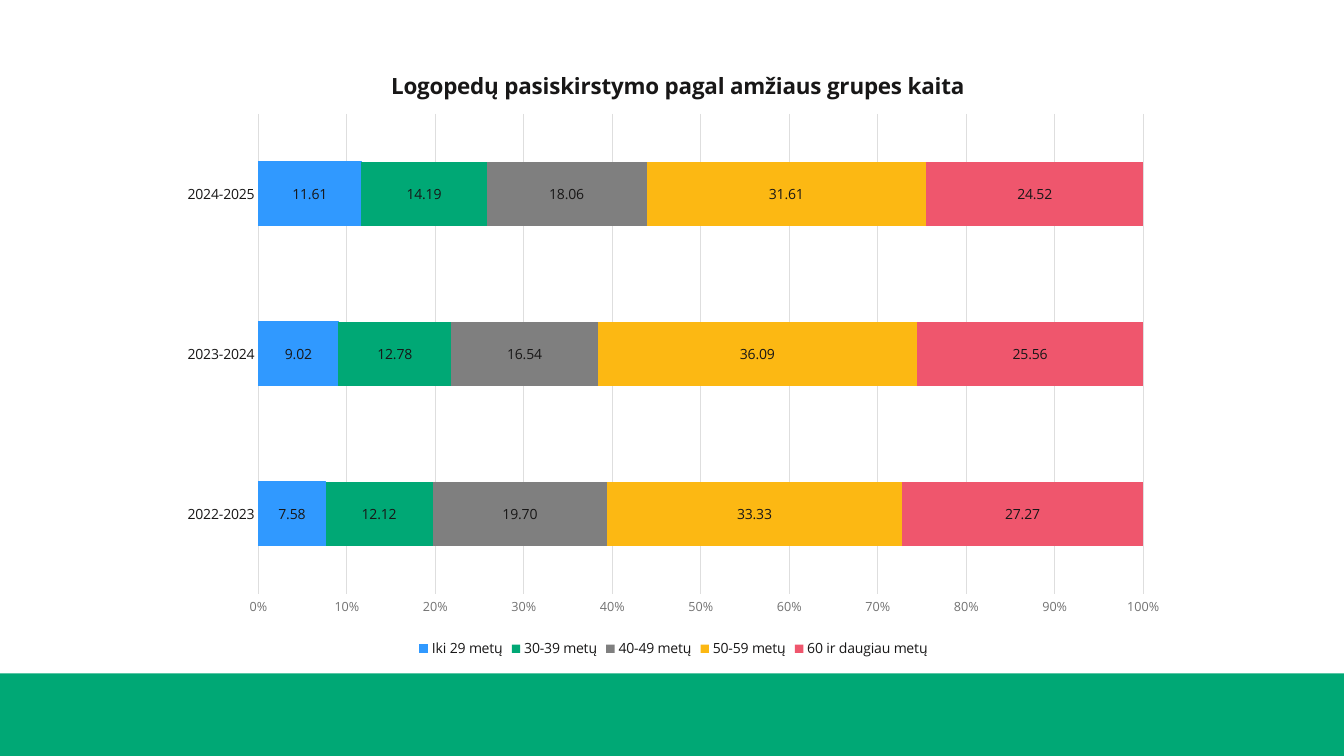
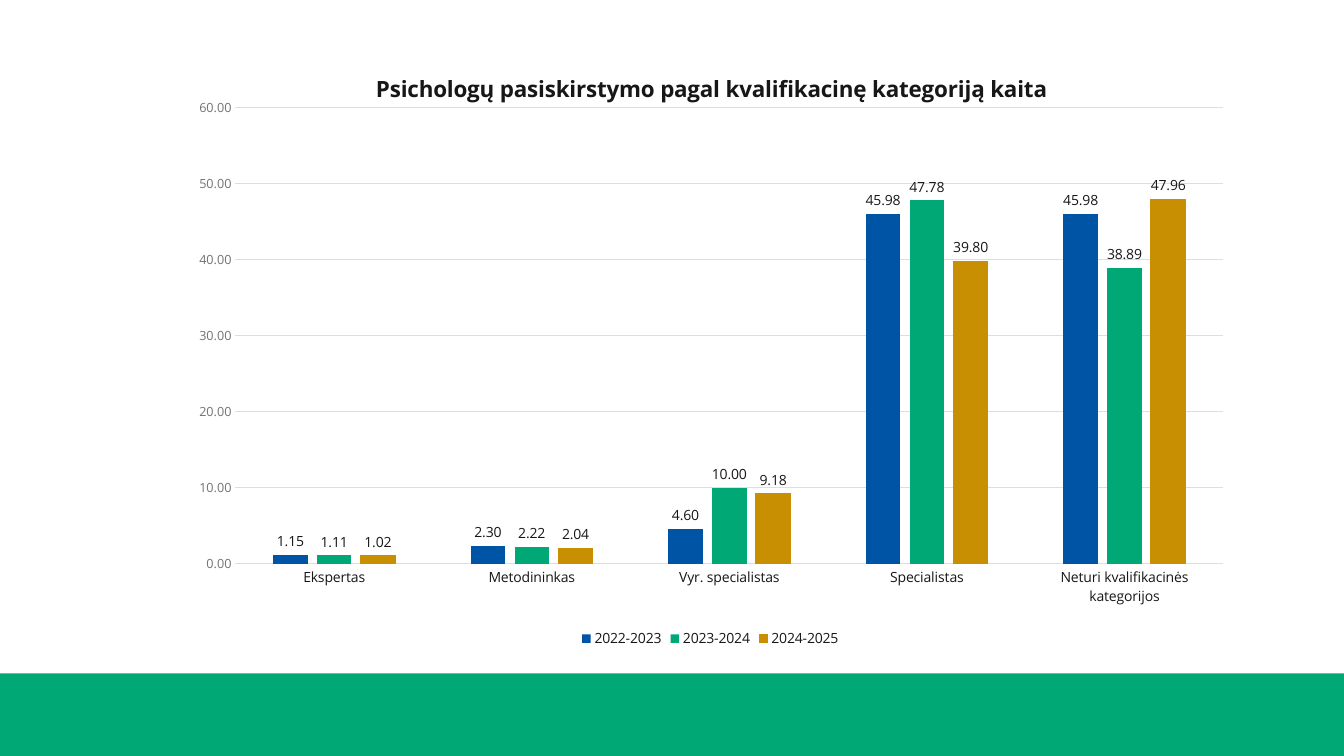
from lxml.etree import SubElement
from pptx import Presentation
from pptx.chart.data import CategoryChartData
from pptx.dml.color import RGBColor
from pptx.enum.chart import (XL_CHART_TYPE, XL_LABEL_POSITION,
                             XL_LEGEND_POSITION, XL_TICK_MARK)
from pptx.enum.shapes import MSO_SHAPE
from pptx.oxml.ns import qn
from pptx.util import Inches, Pt

INK = RGBColor(0x18, 0x17, 0x17)
MUTED = RGBColor(0x72, 0x72, 0x72)
RULE = RGBColor(0xDE, 0xDE, 0xDE)
GREEN = RGBColor(0x00, 0xA8, 0x75)
SKY = RGBColor(0x30, 0x99, 0xFF)
GRAY = RGBColor(0x7F, 0x7F, 0x7F)
AMBER = RGBColor(0xFC, 0xB8, 0x13)
CORAL = RGBColor(0xEF, 0x56, 0x6D)
NAVY = RGBColor(0x00, 0x54, 0xA5)
OCHRE = RGBColor(0xC9, 0x8F, 0x03)


class Deck:
    face = "Open Sans"
    wide, high, band_top = 13.33, 7.5, 6.68

    def __init__(self):
        self.prs = Presentation()
        self.prs.slide_width = Inches(self.wide)
        self.prs.slide_height = Inches(self.high)
        self.slide = None

    def page(self):
        self.slide = self.prs.slides.add_slide(self.prs.slide_layouts[6])
        band = self.slide.shapes.add_shape(
            MSO_SHAPE.RECTANGLE, 0, Inches(self.band_top),
            Inches(self.wide), Inches(self.high - self.band_top))
        band.shadow.inherit = False
        band.fill.solid()
        band.fill.fore_color.rgb = GREEN
        band.line.fill.background()

    def style(self, font, size=10, color=INK, bold=False):
        font.name, font.size, font.bold = self.face, Pt(size), bold
        font.color.rgb = color

    def place(self, node, index, spot, inner=False):
        for old in node.findall(qn("c:layout")):
            node.remove(old)
        layout = SubElement(node, qn("c:layout"))
        node.insert(index, layout)
        manual = SubElement(layout, qn("c:manualLayout"))
        pairs = [("layoutTarget", "inner")] if inner else []
        pairs += [("xMode", "edge"), ("yMode", "edge")]
        pairs += zip("xywh", spot)
        for tag, value in pairs:
            SubElement(manual, qn(f"c:{tag}")).set("val", str(value))

    def title(self, chart, text, spot):
        chart.has_title = True
        title = chart.chart_title
        title.include_in_layout = False
        run = title.text_frame.paragraphs[0].add_run()
        run.text = text
        self.style(run.font, 16, bold=True)
        self.place(title._element, 1, spot)

    def axes(self, chart, form):
        cat, val = chart.category_axis, chart.value_axis
        for axis in (cat, val):
            axis.major_tick_mark = axis.minor_tick_mark = XL_TICK_MARK.NONE
        self.style(cat.tick_labels.font)
        self.style(val.tick_labels.font, 9, MUTED)
        val.has_major_gridlines = True
        for line in (cat.format.line, val.major_gridlines.format.line):
            line.color.rgb = RULE
            line.width = Pt(0.75)
        val.format.line.fill.background()
        val.tick_labels.number_format = form
        val.tick_labels.number_format_is_linked = False

    def series(self, item, color, edged, spot):
        item.format.fill.solid()
        item.format.fill.fore_color.rgb = color
        if edged:
            item.format.line.color.rgb = color
            item.format.line.width = Pt(0.75)
        else:
            item.format.line.fill.background()
        labels = item.data_labels
        labels.show_value = True
        labels.number_format = "0.00"
        labels.number_format_is_linked = False
        labels.position = spot
        self.style(labels.font)

    def chart(self, kind, box, title, title_at, plot_at, cats, rows,
              gap, overlap, form, label_at):
        data = CategoryChartData(number_format="0.00")
        data.categories = cats
        for name, color, edged, values in rows:
            data.add_series(name, values)
        frame = self.slide.shapes.add_chart(kind, *map(Inches, box), data)
        chart = frame.chart
        self.style(chart.font)
        self.title(chart, title, title_at)
        self.axes(chart, form)
        plot = chart.plots[0]
        plot.vary_by_categories = False
        plot.gap_width, plot.overlap = gap, overlap
        for item, (name, color, edged, values) in zip(plot.series, rows):
            self.series(item, color, edged, label_at)
        chart.has_legend = True
        chart.legend.position = XL_LEGEND_POSITION.BOTTOM
        chart.legend.include_in_layout = False
        self.style(chart.legend.font)
        area = chart._chartSpace.find(f".//{qn('c:plotArea')}")
        self.place(area, 0, plot_at, inner=True)
        return chart


def main():
    deck = Deck()
    years = ["2022-2023", "2023-2024", "2024-2025"]

    deck.page()
    deck.chart(
        XL_CHART_TYPE.BAR_STACKED_100, (1.66, 0.41, 10.04, 6.16),
        "Logopedų pasiskirstymo pagal amžiaus grupes kaita",
        (0.217, 0.038), (0.09, 0.117, 0.874, 0.773), years,
        [("Iki 29 metų", SKY, True, (7.58, 9.02, 11.61)),
         ("30-39 metų", GREEN, False, (12.12, 12.78, 14.19)),
         ("40-49 metų", GRAY, False, (19.7, 16.54, 18.06)),
         ("50-59 metų", AMBER, False, (33.33, 36.09, 31.61)),
         ("60 ir daugiau metų", CORAL, False, (27.27, 25.56, 24.52))],
        150, 100, "0%", XL_LABEL_POSITION.CENTER)

    deck.page()
    chart = deck.chart(
        XL_CHART_TYPE.COLUMN_CLUSTERED, (1.8, 0.46, 10.49, 6.01),
        "Psichologų pasiskirstymo pagal kvalifikacinę kategoriją kaita",
        (0.18, 0.035), (0.051, 0.101, 0.934, 0.753),
        ["Ekspertas", "Metodininkas", "Vyr. specialistas", "Specialistas",
         "Neturi kvalifikacinės kategorijos"],
        [(years[0], NAVY, False, (1.15, 2.3, 4.6, 45.98, 45.98)),
         (years[1], GREEN, False, (1.11, 2.22, 10, 47.78, 38.89)),
         (years[2], OCHRE, True, (1.02, 2.04, 9.18, 39.8, 47.96))],
        219, -27, "0.00", XL_LABEL_POSITION.OUTSIDE_END)
    chart.value_axis.maximum_scale = 60
    chart.value_axis.major_unit = 10

    deck.prs.save("out.pptx")


if __name__ == "__main__":
    main()
